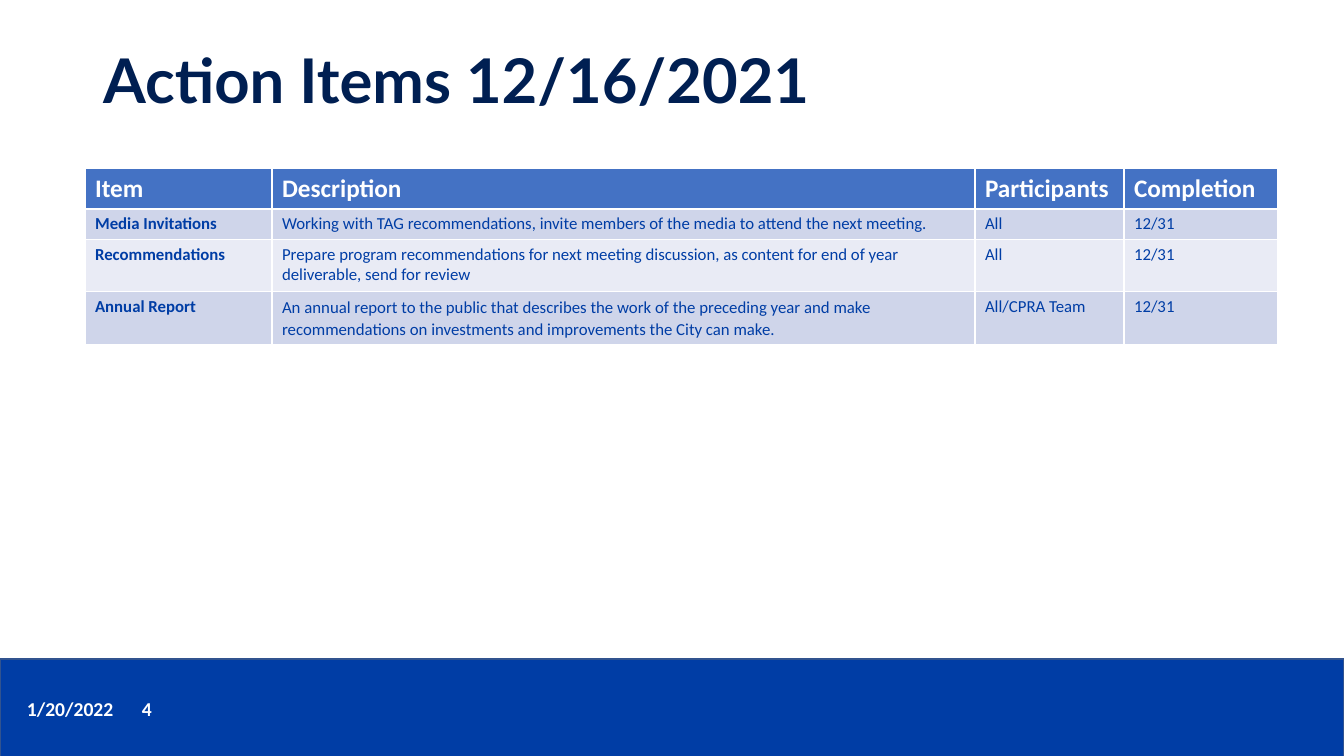
from dataclasses import dataclass

from pptx import Presentation
from pptx.dml.color import RGBColor as RGB
from pptx.enum.shapes import MSO_SHAPE as SHAPE
from pptx.enum.text import MSO_ANCHOR as ANCHOR, MSO_AUTO_SIZE as AUTO, PP_ALIGN as ALIGN
from pptx.util import Pt

PX = 914400 / 100.8


@dataclass(frozen=True)
class Theme:
    heading_font: str = "Lato"
    body_font: str = "Calibri"
    navy: str = "001F52"
    blue: str = "003DA5"
    bar_edge: str = "31538F"
    header: str = "4472C4"
    bands: tuple = ("CFD5EA", "E9EBF5")
    white: str = "FFFFFF"
    title_size: int = 44
    header_size: int = 18
    cell_size: int = 12
    footer_size: int = 14


THEME = Theme()
COLUMNS = [187, 703, 149, 154]
ROWS = [41, 30, 52, 53]
ACTION_ITEMS = [
    ("Item", "Description", "Participants", "Completion"),
    ("Media Invitations",
     "Working with TAG recommendations, invite members of the media to attend the next meeting.",
     "All", "12/31"),
    ("Recommendations",
     "Prepare program recommendations for next meeting discussion, as content for end of year "
     "deliverable, send for review",
     "All", "12/31"),
    ("Annual Report",
     "An annual report to the public that describes the work of the preceding year and make "
     "recommendations on investments and improvements the City can make.",
     "All/CPRA Team", "12/31"),
]


def px(n):
    return round(n * PX)


def box_emu(*box):
    return [px(n) for n in box]


def write(tf, text, size, color, bold=True, font=THEME.body_font):
    p = tf.paragraphs[0]
    p.text = text
    p.alignment = ALIGN.LEFT
    p.font.name = font
    p.font.size = Pt(size)
    p.font.bold = bold
    p.font.color.rgb = RGB.from_string(color)
    return p


def fill(target, color):
    target.fill.solid()
    target.fill.fore_color.rgb = RGB.from_string(color)


def add_footer(s, x, y, w, h):
    bar = s.shapes.add_shape(SHAPE.RECTANGLE, *box_emu(x, y, w, h))
    bar.shadow.inherit = False
    fill(bar, THEME.blue)
    bar.line.color.rgb = RGB.from_string(THEME.bar_edge)
    bar.line.width = Pt(1)
    for text, left, width in (("1/20/2022", 17, 168), ("4", 132, 75)):
        sp = s.shapes.add_textbox(*box_emu(x + left, y + 30, width, 40))
        tf = sp.text_frame
        tf.word_wrap = True
        tf.vertical_anchor = ANCHOR.MIDDLE
        write(tf, text, THEME.footer_size, THEME.white)


def add_title(s, text, x, y, w, h):
    title = s.shapes.title
    title.left, title.top, title.width, title.height = box_emu(x, y, w, h)
    tf = title.text_frame
    tf.auto_size = AUTO.NONE
    tf.vertical_anchor = ANCHOR.MIDDLE
    p = write(tf, text, THEME.title_size, THEME.navy, font=THEME.heading_font)
    p.line_spacing = 0.9


def add_action_table(s, x, y):
    box = box_emu(x, y, sum(COLUMNS), sum(ROWS))
    table = s.shapes.add_table(len(ROWS), len(COLUMNS), *box).table
    for column, width in zip(table.columns, COLUMNS):
        column.width = px(width)
    for r, (height, texts) in enumerate(zip(ROWS, ACTION_ITEMS)):
        table.rows[r].height = px(height)
        for c, text in enumerate(texts):
            cell = table.cell(r, c)
            if r == 0:
                fill(cell, THEME.header)
                write(cell.text_frame, text, THEME.header_size, THEME.white)
            else:
                fill(cell, THEME.bands[(r - 1) % 2])
                write(cell.text_frame, text, THEME.cell_size, THEME.blue, bold=c == 0)
    report = table.cell(3, 1).text_frame.paragraphs[0]
    report.line_spacing = 1.07
    report.space_after = Pt(8)


def main():
    prs = Presentation()
    prs.slide_width, prs.slide_height = box_emu(1344, 756)
    s = prs.slides.add_slide(prs.slide_layouts[5])
    add_footer(s, 0, 659, 1344, 98)
    add_title(s, "Action Items 12/16/2021", 93, 40, 1159, 88)
    add_action_table(s, 85, 168)
    prs.save("out.pptx")


if __name__ == "__main__":
    main()
